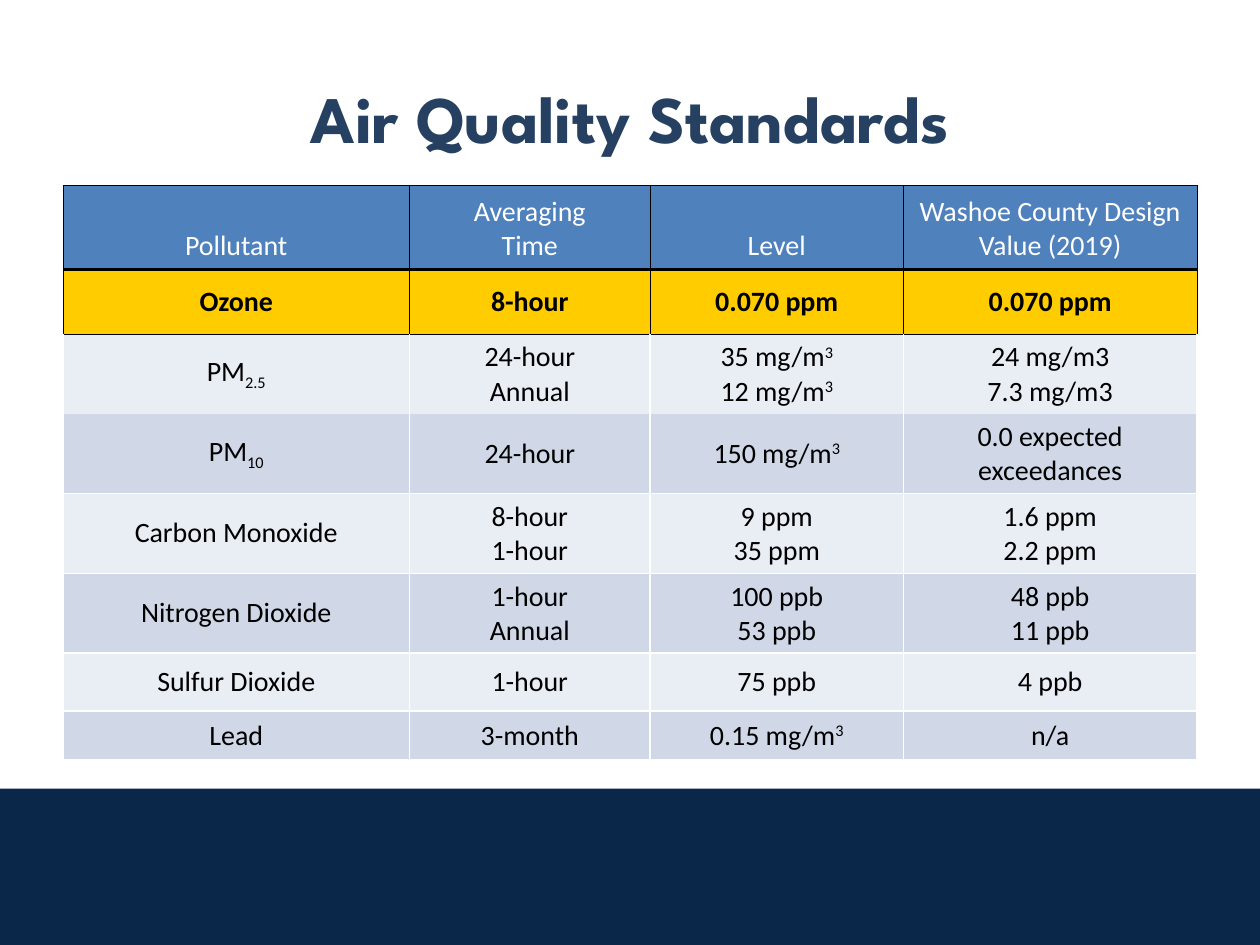
"""Build a slide with a table of air quality standards."""
from dataclasses import dataclass
from typing import NamedTuple, Optional

from lxml.etree import SubElement
from pptx import Presentation
from pptx.dml.color import RGBColor
from pptx.enum.shapes import MSO_SHAPE
from pptx.enum.text import MSO_ANCHOR, PP_ALIGN
from pptx.oxml.ns import qn
from pptx.util import Inches, Pt


@dataclass(frozen=True)
class Theme:
    title_font: str = "League Spartan"
    body_font: str = "Calibri"
    title_size: float = 38
    body_size: float = 16
    title: str = "254061"
    footer: str = "0A2649"
    header: str = "4F81BD"
    highlight: str = "FFCC00"
    light: str = "E9EDF4"
    dark: str = "D0D8E8"
    white: str = "FFFFFF"
    black: str = "000000"


class Line(NamedTuple):
    color: str
    width: float


class Row(NamedTuple):
    height: float
    fill: str
    side: Line
    bottom: Optional[Line]
    cells: tuple
    color: str = Theme.black
    bold: bool = False
    anchor: MSO_ANCHOR = MSO_ANCHOR.MIDDLE


T = Theme()
THIN = Line(T.black, 0.25)
THICK = Line(T.black, 2.25)
WHITE = Line(T.white, 1)
BASELINES = {"_": -25000, "^": 30000}
COLUMNS = (2.75, 1.91, 2.01, 2.33)
ROWS = (
    Row(0.67, T.header, THIN, THICK,
        ("Pollutant", "Averaging\nTime", "Level", "Washoe County Design Value (2019)"),
        color=T.white, anchor=MSO_ANCHOR.BOTTOM),
    Row(0.51, T.highlight, THIN, THIN,
        ("Ozone", "8-hour", "0.070 ppm", "0.070 ppm"), bold=True),
    Row(0.56, T.light, WHITE, None,
        ("PM|_2.5", "24-hour\nAnnual", "35 mg/m|^3\n12 mg/m|^3", "24 mg/m3\n7.3 mg/m3")),
    Row(0.56, T.dark, WHITE, WHITE,
        ("PM|_10", "24-hour", "150 mg/m|^3", "0.0 expected exceedances")),
    Row(0.56, T.light, WHITE, WHITE,
        ("Carbon Monoxide", "8-hour\n1-hour", "9 ppm\n35 ppm", "1.6 ppm\n2.2 ppm")),
    Row(0.56, T.dark, WHITE, WHITE,
        ("Nitrogen Dioxide", "1-hour\nAnnual", "100 ppb\n53 ppb", "48 ppb\n11 ppb")),
    Row(0.46, T.light, WHITE, WHITE, ("Sulfur Dioxide", "1-hour", "75 ppb", "4 ppb")),
    Row(0.39, T.dark, WHITE, WHITE, ("Lead", "3-month", "0.15 mg/m|^3", "n/a")),
)


def add_run(p, text: str, font: str, size: float, color: str, bold: bool):
    r = p.add_run()
    r.text = text
    r.font.name = font
    r.font.size = Pt(size)
    r.font.bold = bold
    r.font.color.rgb = RGBColor.from_string(color)
    return r


def add_footer(s) -> None:
    sp = s.shapes.add_shape(MSO_SHAPE.RECTANGLE, 0, Inches(6.26), Inches(10), Inches(1.24))
    sp.shadow.inherit = False
    sp.fill.solid()
    sp.fill.fore_color.rgb = RGBColor.from_string(T.footer)
    sp.line.fill.background()


def add_title(s, text: str) -> None:
    sp = s.shapes.add_textbox(Inches(0.5), Inches(0.3), Inches(9), Inches(1.25))
    tf = sp.text_frame
    tf.word_wrap = True
    tf.vertical_anchor = MSO_ANCHOR.MIDDLE
    p = tf.paragraphs[0]
    p.alignment = PP_ALIGN.CENTER
    add_run(p, text, T.title_font, T.title_size, T.title, True)


def set_borders(cell, left_right: Line, top: Optional[Line], bottom: Optional[Line]) -> None:
    tc_pr = cell._tc.get_or_add_tcPr()
    sides = (("a:lnL", left_right), ("a:lnR", left_right), ("a:lnT", top), ("a:lnB", bottom))
    for tag, line in sides:
        ln = SubElement(tc_pr, qn(tag))
        if line is None:
            SubElement(ln, qn("a:noFill"))
            continue
        ln.set("w", str(Pt(line.width)))
        SubElement(SubElement(ln, qn("a:solidFill")), qn("a:srgbClr")).set("val", line.color)


def fill_cell(cell, row: Row, text: str, top: Optional[Line]) -> None:
    set_borders(cell, row.side, top, row.bottom)
    cell.fill.solid()
    cell.fill.fore_color.rgb = RGBColor.from_string(row.fill)
    cell.vertical_anchor = row.anchor
    tf = cell.text_frame
    for i, line in enumerate(text.split("\n")):
        p = tf.add_paragraph() if i else tf.paragraphs[0]
        p.alignment = PP_ALIGN.CENTER
        for part in line.split("|"):
            r = add_run(p, part.lstrip("_^"), T.body_font, T.body_size, row.color, row.bold)
            if part[0] in BASELINES:
                r.font._element.set("baseline", str(BASELINES[part[0]]))


def add_standards(s) -> None:
    height = sum(row.height for row in ROWS)
    table = s.shapes.add_table(len(ROWS), len(COLUMNS), Inches(0.5), Inches(1.47),
                               Inches(sum(COLUMNS)), Inches(height)).table
    table.first_row = False
    table.horz_banding = False
    for column, width in zip(table.columns, COLUMNS):
        column.width = Inches(width)
    top = THIN
    for i, row in enumerate(ROWS):
        table.rows[i].height = Inches(row.height)
        for j, text in enumerate(row.cells):
            fill_cell(table.cell(i, j), row, text, top)
        top = row.bottom


def main() -> None:
    prs = Presentation()
    prs.slide_width, prs.slide_height = Inches(10), Inches(7.5)
    s = prs.slides.add_slide(prs.slide_layouts[6])
    add_footer(s)
    add_title(s, "Air Quality Standards")
    add_standards(s)
    prs.save("out.pptx")


if __name__ == "__main__":
    main()
